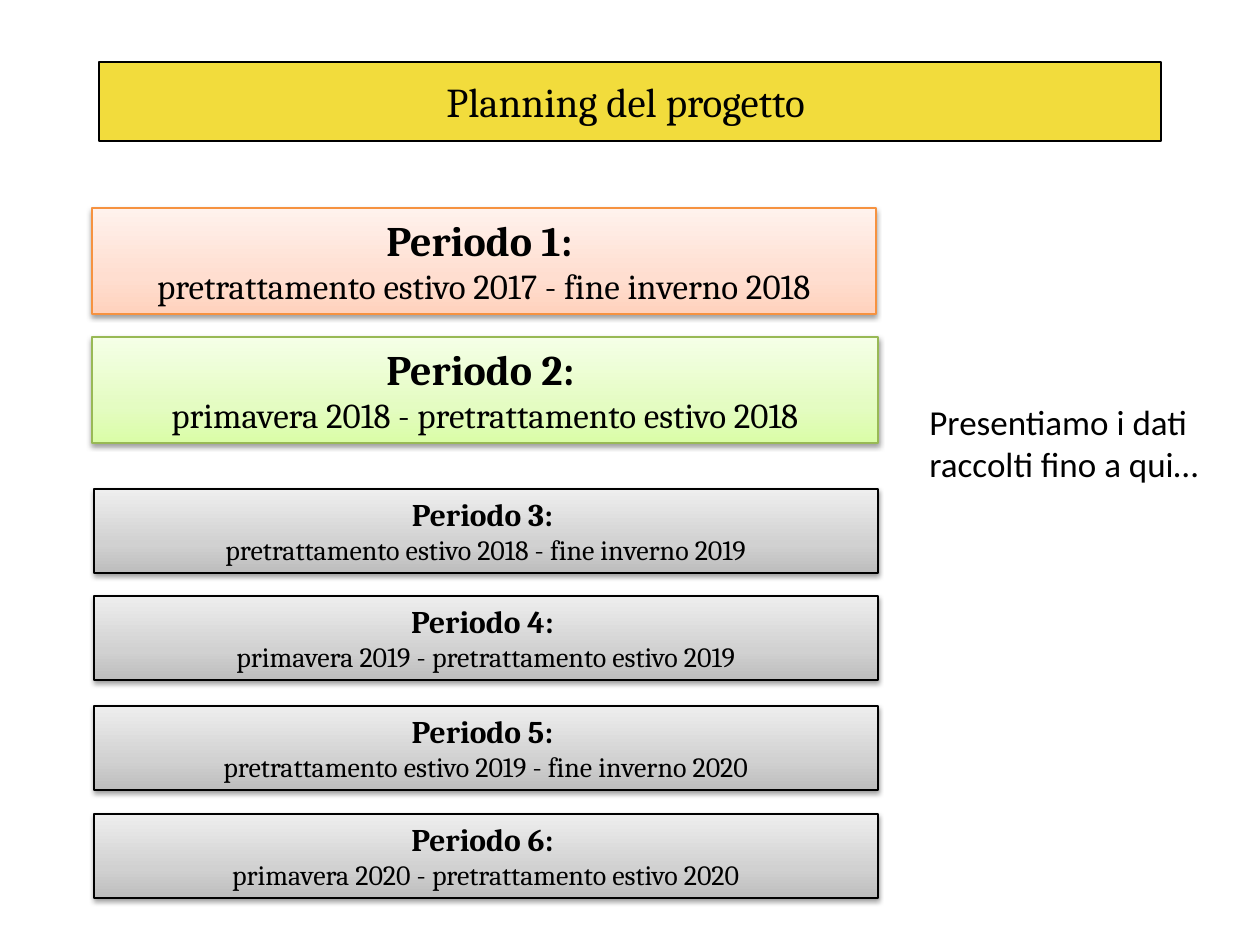
from copy import deepcopy
from dataclasses import dataclass

from lxml import etree
from pptx import Presentation
from pptx import util as u
from pptx.dml.color import RGBColor
from pptx.enum import shapes, text
from pptx.oxml.ns import qn

PX = u.Inches(1) / 126


@dataclass(frozen=True)
class Look:
    line: str
    stops: tuple[str, str, str]  # bottom to top
    head_size: float
    body_size: float


@dataclass(frozen=True)
class Theme:
    ink: str = "000000"
    banner: str = "F2DC3C"
    serif: str = "Cambria"
    sans: str = "Calibri"
    title_size: float = 23.4
    note_size: float = 20
    line_width: float = 0.75
    orange: Look = Look("F69240", ("FFD2BD", "FFDED0", "FFF2ED"), 24, 20)
    green: Look = Look("98B955", ("DAFDA7", "E4FCC2", "F5FFE7"), 24, 20)
    grey: Look = Look("000000", ("BDBDBD", "D1D1D1", "EEEEEE"), 18, 16)


THEME = Theme()
STOP_POSITIONS = (0, 0.35, 1)


@dataclass(frozen=True)
class Box:
    left: int
    top: int
    width: int
    height: int

    def emu(self) -> list[int]:
        return [round(v * PX) for v in (self.left, self.top, self.width, self.height)]


@dataclass(frozen=True)
class Period:
    box: Box
    look: Look
    dates: str


PERIODS = (
    Period(Box(92, 208, 784, 106), THEME.orange, "pretrattamento estivo 2017 - fine inverno 2018"),
    Period(Box(92, 337, 786, 106), THEME.green, "primavera 2018 - pretrattamento estivo 2018"),
    Period(Box(94, 489, 784, 84), THEME.grey, "pretrattamento estivo 2018 - fine inverno 2019"),
    Period(Box(94, 596, 784, 84), THEME.grey, "primavera 2019 - pretrattamento estivo 2019"),
    Period(Box(94, 706, 784, 84), THEME.grey, "pretrattamento estivo 2019 - fine inverno 2020"),
    Period(Box(94, 814, 784, 84), THEME.grey, "primavera 2020 - pretrattamento estivo 2020"),
)
TITLE_BOX = Box(99, 62, 1062, 79)
NOTE_BOX = Box(917, 394, 320, 97)


def style(p, font: str, size: float, bold: bool = False) -> None:
    for r in p.runs:
        r.font.name, r.font.size, r.font.bold = font, u.Pt(size), bold
        r.font.color.rgb = RGBColor.from_string(THEME.ink)


def add_rect(s, box: Box, line: str):
    sp = s.shapes.add_shape(shapes.MSO_SHAPE.RECTANGLE, *box.emu())
    sp.shadow.inherit = False
    sp.line.color.rgb = RGBColor.from_string(line)
    sp.line.width = u.Pt(THEME.line_width)
    sp.text_frame.word_wrap = True
    return sp


def fill_gradient(sp, colors: tuple[str, ...]) -> None:
    """Fill with three stops running from bottom to top."""
    sp.fill.gradient()
    sp.fill.gradient_angle = 90
    stops = sp._element.spPr.find(".//" + qn("a:gsLst"))
    stops.append(deepcopy(stops[0]))
    for stop, position, color in zip(sp.fill.gradient_stops, STOP_POSITIONS, colors):
        stop.position = position
        stop.color.rgb = RGBColor.from_string(color)


def add_shadow(sp) -> None:
    effects = sp._element.spPr.find(qn("a:effectLst"))
    shadow = etree.SubElement(effects, qn("a:outerShdw"), blurRad=str(u.Pt(3.1)),
                              dist=str(u.Pt(1.6)), dir="5400000", rotWithShape="0")
    color = etree.SubElement(shadow, qn("a:srgbClr"), val=THEME.ink)
    etree.SubElement(color, qn("a:alpha"), val="38000")


def add_period(s, number: int, period: Period) -> None:
    look = period.look
    sp = add_rect(s, period.box, look.line)
    fill_gradient(sp, look.stops)
    add_shadow(sp)
    tf = sp.text_frame
    tf.text = f"Periodo {number}: \n{period.dates}"
    tf.vertical_anchor = text.MSO_ANCHOR.TOP
    tf.auto_size = text.MSO_AUTO_SIZE.SHAPE_TO_FIT_TEXT
    head, body = tf.paragraphs
    style(head, THEME.serif, look.head_size, bold=True)
    style(body, THEME.serif, look.body_size)
    for p in (head, body):
        p.alignment = text.PP_ALIGN.CENTER


def add_title(s) -> None:
    sp = add_rect(s, TITLE_BOX, THEME.ink)
    sp.fill.solid()
    sp.fill.fore_color.rgb = RGBColor.from_string(THEME.banner)
    tf = sp.text_frame
    tf.text = "Planning del progetto "
    tf.vertical_anchor = text.MSO_ANCHOR.MIDDLE
    tf.paragraphs[0].alignment = text.PP_ALIGN.CENTER
    style(tf.paragraphs[0], THEME.serif, THEME.title_size)


def add_note(s) -> None:
    tf = s.shapes.add_textbox(*NOTE_BOX.emu()).text_frame
    tf.word_wrap = True
    tf.auto_size = text.MSO_AUTO_SIZE.SHAPE_TO_FIT_TEXT
    tf.text = "Presentiamo i dati raccolti fino a qui…"
    style(tf.paragraphs[0], THEME.sans, THEME.note_size)


def main() -> None:
    prs = Presentation()
    prs.slide_width, prs.slide_height = u.Inches(10), u.Inches(7.5)
    s = prs.slides.add_slide(prs.slide_layouts[6])
    for number, period in enumerate(PERIODS, start=1):
        add_period(s, number, period)
    add_title(s)
    add_note(s)
    prs.save("out.pptx")


if __name__ == "__main__":
    main()
